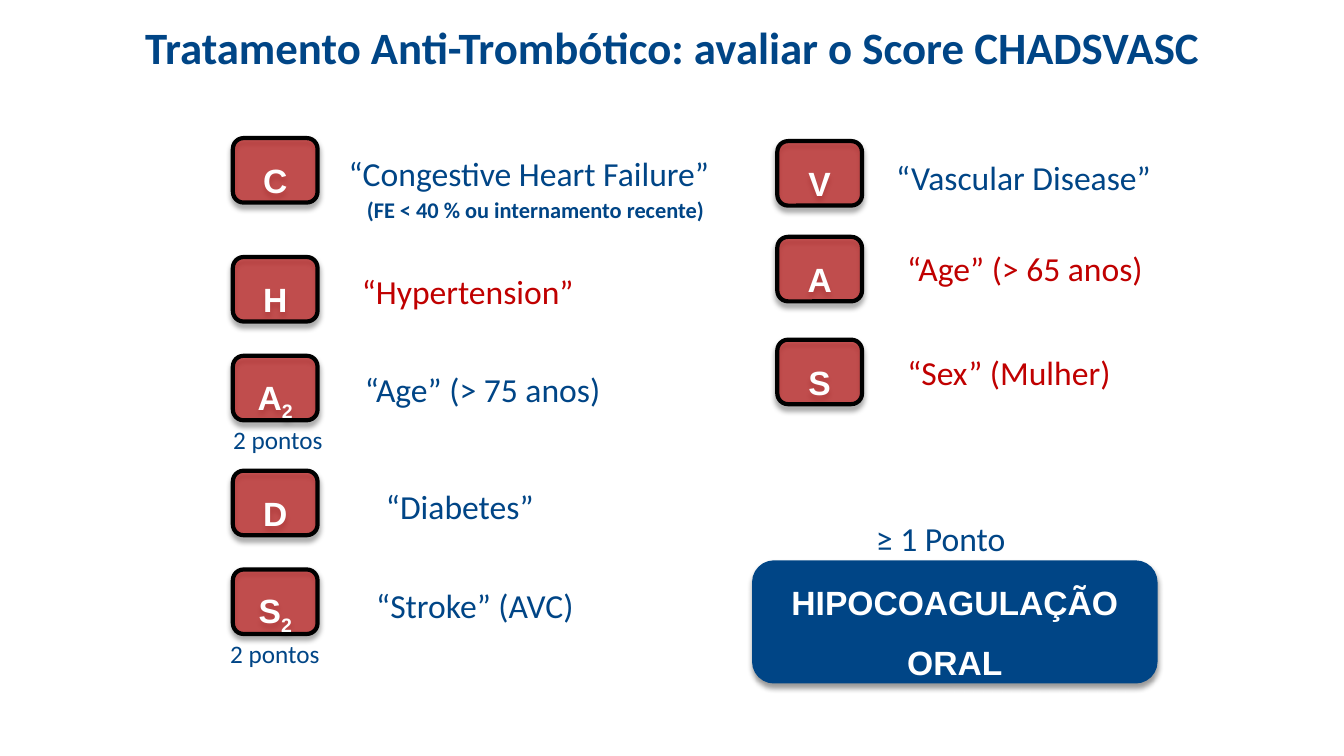
from dataclasses import dataclass

from lxml import etree
from pptx import Presentation
from pptx.dml.color import RGBColor
from pptx.enum import shapes, text
from pptx.oxml import ns
from pptx.util import Inches, Pt

LEFT, CENTER = text.PP_ALIGN.LEFT, text.PP_ALIGN.CENTER


@dataclass(frozen=True)
class Theme:
    blue: str = "004586"
    red: str = "C00000"
    black: str = "000000"
    white: str = "FFFFFF"
    body_font: str = "Calibri"
    badge_font: str = "Arial"
    title: int = 32
    body: int = 24
    points: int = 18
    detail: int = 16


@dataclass(frozen=True)
class Badge:
    letter: str
    left: float
    top: float
    subscript: str = ""


@dataclass(frozen=True)
class Label:
    text: str
    left: float
    top: float
    width: float
    height: float = 0.5
    color: str = Theme.blue
    size: int = Theme.body
    bold: bool = False
    align: text.PP_ALIGN = LEFT
    wrap: bool = False


THEME = Theme()
TITLE = "Tratamento Anti-Trombótico: avaliar o Score CHADSVASC"
LEFT_COLUMN, RIGHT_COLUMN = 2.31, 7.71
BADGES = [
    Badge("C", LEFT_COLUMN, 1.37),
    Badge("H", LEFT_COLUMN, 2.55),
    Badge("A", LEFT_COLUMN, 3.53, "2"),
    Badge("D", LEFT_COLUMN, 4.67),
    Badge("S", LEFT_COLUMN, 5.65, "2"),
    Badge("V", RIGHT_COLUMN, 1.4),
    Badge("A", RIGHT_COLUMN, 2.35),
    Badge("S", RIGHT_COLUMN, 3.37),
]
LABELS = [
    Label("“Congestive Heart Failure”", 3.36, 1.47, 3.81),
    Label("(FE < 40 % ou internamento recente)", 3.54, 1.9, 3.59, 0.37,
          size=THEME.detail, bold=True),
    Label("“Hypertension”", 3.49, 2.64, 2.38, color=THEME.red),
    Label("“Age” (> 75 anos)", 3.52, 3.61, 2.56),
    Label("2 pontos", 2.2, 4.16, 1.11, 0.4, size=THEME.points, align=CENTER),
    Label("“Diabetes”", 3.73, 4.77, 1.72),
    Label("“Stroke” (AVC)", 3.59, 5.75, 2.24, align=CENTER),
    Label("2 pontos", 2.17, 6.28, 1.11, 0.4, size=THEME.points, align=CENTER),
    Label("“Vascular Disease”", 8.79, 1.51, 2.82),
    Label("“Age” (> 65 anos)", 8.9, 2.41, 2.64, color=THEME.red),
    Label("“Sex” (Mulher)", 8.9, 3.44, 2.29, color=THEME.red),
    Label("≥ 1 Ponto", 8.5, 5.09, 1.66, align=CENTER, wrap=True),
]


def add_run(p, words: str, size: int, color: str, font: str, bold: bool = False):
    r = p.add_run()
    r.text = words
    r.font.size, r.font.name, r.font.bold = Pt(size), font, bold
    r.font.color.rgb = RGBColor.from_string(color)
    return r


def set_alpha(parent, percent: int) -> None:
    """Make the first colour found under parent partly opaque."""
    color = next(parent.iter(ns.qn("a:srgbClr")))
    etree.SubElement(color, ns.qn("a:alpha")).set("val", str(percent * 1000))


def add_shadow(sp) -> None:
    """Give the shape a soft shadow that falls straight down."""
    sp.shadow.inherit = False
    effects = sp._element.spPr.find(ns.qn("a:effectLst"))
    shadow = etree.SubElement(effects, ns.qn("a:outerShdw"), {
        "blurRad": str(Pt(4)), "dist": str(Pt(3)), "dir": "5400000", "rotWithShape": "0"})
    etree.SubElement(shadow, ns.qn("a:srgbClr")).set("val", THEME.black)
    set_alpha(shadow, 40)


def add_rounded_box(slide, left: float, top: float, width: float, height: float,
                    fill: str, line: str, lines: list[str]):
    sp = slide.shapes.add_shape(shapes.MSO_SHAPE.ROUNDED_RECTANGLE, Inches(left),
                                Inches(top), Inches(width), Inches(height))
    sp.fill.solid()
    sp.fill.fore_color.rgb = RGBColor.from_string(fill)
    sp.line.color.rgb = RGBColor.from_string(line)
    sp.line.width = Pt(3)
    add_shadow(sp)
    tf = sp.text_frame
    tf.word_wrap = True
    tf.vertical_anchor = text.MSO_ANCHOR.MIDDLE
    tf.margin_left = tf.margin_right = Inches(0.08)
    tf.margin_top = tf.margin_bottom = Inches(0.04)
    for i, words in enumerate(lines):
        p = tf.add_paragraph() if i else tf.paragraphs[0]
        p.alignment, p.line_spacing = CENTER, 1.5
        add_run(p, words, THEME.body, THEME.white, THEME.badge_font, True)
    return sp


def add_badge(slide, badge: Badge) -> None:
    sp = add_rounded_box(slide, badge.left, badge.top, 0.84, 0.64,
                         THEME.red, THEME.black, [badge.letter])
    set_alpha(sp._element.spPr.find(ns.qn("a:solidFill")), 60)
    if badge.subscript:
        r = add_run(sp.text_frame.paragraphs[0], badge.subscript, THEME.body,
                    THEME.white, THEME.badge_font, True)
        r._r.get_or_add_rPr().set("baseline", "-25000")


def add_label(slide, label: Label) -> None:
    sp = slide.shapes.add_textbox(Inches(label.left), Inches(label.top),
                                  Inches(label.width), Inches(label.height))
    tf = sp.text_frame
    tf.word_wrap = label.wrap
    tf.auto_size = text.MSO_AUTO_SIZE.SHAPE_TO_FIT_TEXT
    p = tf.paragraphs[0]
    p.alignment = label.align
    add_run(p, label.text, label.size, label.color, THEME.body_font, label.bold)


def set_title(slide) -> None:
    sp = slide.shapes.title
    sp.left, sp.top, sp.width, sp.height = map(Inches, (0.67, 0.17, 12, 0.66))
    tf = sp.text_frame
    tf.auto_size = text.MSO_AUTO_SIZE.NONE
    tf.vertical_anchor = text.MSO_ANCHOR.MIDDLE
    p = tf.paragraphs[0]
    p.alignment, p.line_spacing = CENTER, 0.9
    add_run(p, TITLE, THEME.title, THEME.blue, THEME.body_font, True)


def main() -> None:
    prs = Presentation()
    prs.slide_width, prs.slide_height = Inches(13.33), Inches(7.5)
    slide = prs.slides.add_slide(prs.slide_layouts.get_by_name("Title Only"))
    set_title(slide)
    for badge in BADGES:
        add_badge(slide, badge)
    add_rounded_box(slide, 7.48, 5.58, 3.98, 1.18, THEME.blue, THEME.blue,
                    ["HIPOCOAGULAÇÃO", "ORAL"])
    for label in LABELS:
        add_label(slide, label)
    prs.save("out.pptx")


if __name__ == "__main__":
    main()
